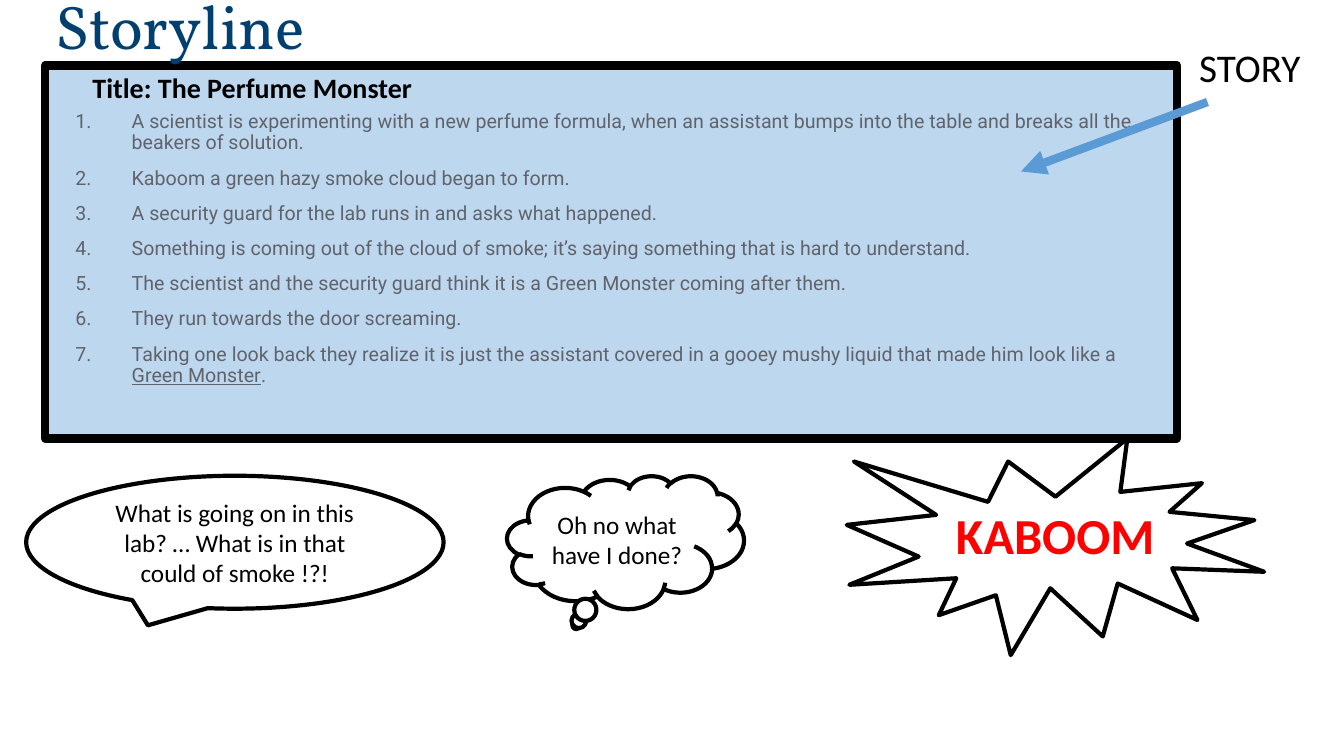
import pptx
import pptx.util
import pptx.dml.color
import pptx.enum.shapes
import pptx.enum.text
import pptx.oxml.ns
import lxml.etree

Cm, Pt = pptx.util.Cm, pptx.util.Pt
SHAPE = pptx.enum.shapes.MSO_SHAPE
ALIGN = pptx.enum.text.PP_ALIGN
ANCHOR = pptx.enum.text.MSO_ANCHOR

COLOURS = {
    "black": "000000",
    "white": "FFFFFF",
    "panel": "BDD7EE",
    "title": "004071",
    "story": "60636B",
    "arrow": "5B9BD5",
    "kaboom": "FF0000",
}

STORY = [
    ["A scientist is experimenting with a new perfume formula, when an assistant "
     "bumps into the table and breaks all the beakers of solution."],
    ["Kaboom a green hazy smoke cloud began to form."],
    ["A security guard for the lab runs in and asks what happened."],
    ["Something is coming out of the cloud of smoke; it’s saying something that is "
     "hard to understand."],
    ["The scientist and the security guard think it is a Green Monster coming after them."],
    ["They run towards the door screaming."],
    ["Taking one look back they realize it is just the assistant covered in a gooey "
     "mushy liquid that made him look like a ", "Green Monster", "."],
]
UNDERLINED = "Green Monster"


def colour(name):
    return pptx.dml.color.RGBColor.from_string(COLOURS[name])


def add_element(parent, tag, **attributes):
    return lxml.etree.SubElement(parent, pptx.oxml.ns.qn(tag), attributes)


class Storyboard:
    """Holds the page and draws each kind of element in one style."""

    def __init__(self, page, font="Calibri"):
        self.page = page
        self.font = font

    def style(self, para, size, ink="black", font=None, bold=False):
        para.font.name = font or self.font
        para.font.size = Pt(size)
        para.font.bold = bold
        para.font.color.rgb = colour(ink)

    def box(self, at, wrap=True):
        frame = self.page.shapes.add_textbox(*map(Cm, at)).text_frame
        frame.word_wrap = wrap
        return frame

    def label(self, at, text, size, align=ALIGN.LEFT, wrap=True, **look):
        frame = self.box(at, wrap)
        para = frame.paragraphs[0]
        para.text = text
        para.alignment = align
        self.style(para, size, **look)
        return frame

    def shape(self, kind, at, fill="white", width=3, text=None):
        shape = self.page.shapes.add_shape(kind, *map(Cm, at))
        shape.shadow.inherit = False
        shape.fill.solid()
        shape.fill.fore_color.rgb = colour(fill)
        shape.line.color.rgb = colour("black")
        shape.line.width = Pt(width)
        if text:
            frame = shape.text_frame
            frame.word_wrap = True
            frame.vertical_anchor = ANCHOR.MIDDLE
            para = frame.paragraphs[0]
            para.text = text
            para.alignment = ALIGN.CENTER
            self.style(para, 18)

    def numbered_list(self, at, items, size, ink, font):
        frame = self.box(at)
        indent = Cm(1.42)
        for index, parts in enumerate(items):
            para = frame.add_paragraph() if index else frame.paragraphs[0]
            para.line_spacing = 0.9
            para.space_before = Pt(10 if index else 0)
            properties = para._p.get_or_add_pPr()
            properties.set("marL", str(indent))
            properties.set("indent", str(-indent))
            add_element(properties, "a:buFont", typeface="+mj-lt")
            add_element(properties, "a:buAutoNum", type="arabicPeriod")
            self.style(para, size, ink, font)
            for part in parts:
                span = para.add_run()
                span.text = part
                if part == UNDERLINED:
                    span.font.underline = True

    def arrow(self, start, end, ink, width):
        arrow = self.page.shapes.add_connector(
            pptx.enum.shapes.MSO_CONNECTOR.STRAIGHT, *map(Cm, start + end))
        arrow.line.color.rgb = colour(ink)
        arrow.line.width = Pt(width)
        add_element(arrow.line._get_or_add_ln(), "a:tailEnd", type="triangle")
        add_element(arrow._element.spPr, "a:effectLst")


def main():
    deck = pptx.Presentation()
    deck.slide_width, deck.slide_height = Cm(33.87), Cm(19.05)
    board = Storyboard(deck.slides.add_slide(deck.slide_layouts[6]))

    # Story panel and heading
    board.shape(SHAPE.RECTANGLE, (1.14, 1.65, 28.52, 9.4), fill="panel", width=6)
    heading = board.label((1.14, -1.19, 31.57, 3.89), "Storyline", 44,
                          ink="title", font="Vollkorn")
    heading.vertical_anchor = ANCHOR.MIDDLE
    heading.paragraphs[0].line_spacing = 0.9

    # Story text
    board.numbered_list((1.65, 2.69, 27.71, 8.53), STORY, 14, "story", "Roboto")
    board.label((2.08, 1.65, 8.64, 1.12), "Title: The Perfume Monster", 20,
                wrap=False, bold=True)

    # Speech, thought and explosion
    balloon_top, balloon_height = 11.99, 3.35
    board.shape(SHAPE.OVAL_CALLOUT, (0.66, balloon_top, 10.52, balloon_height),
                text="What is going on in this lab? … What is in that could of smoke !?!")
    board.shape(SHAPE.CLOUD_CALLOUT, (12.78, balloon_top, 5.97, balloon_height),
                text="Oh no what have I done?")
    board.shape(SHAPE.EXPLOSION1, (21.34, 11.05, 10.52, 5.46))
    board.label((22.33, 12.57, 8.53, 1.8), "KABOOM", 36, align=ALIGN.CENTER,
                ink="kaboom", bold=True)

    # Pointer to the story
    board.arrow((30.43, 2.57), (25.73, 4.32), "arrow", 6)
    board.label((29.97, 0.97, 3.71, 1.45), "STORY", 28)

    deck.save("out.pptx")


if __name__ == "__main__":
    main()
